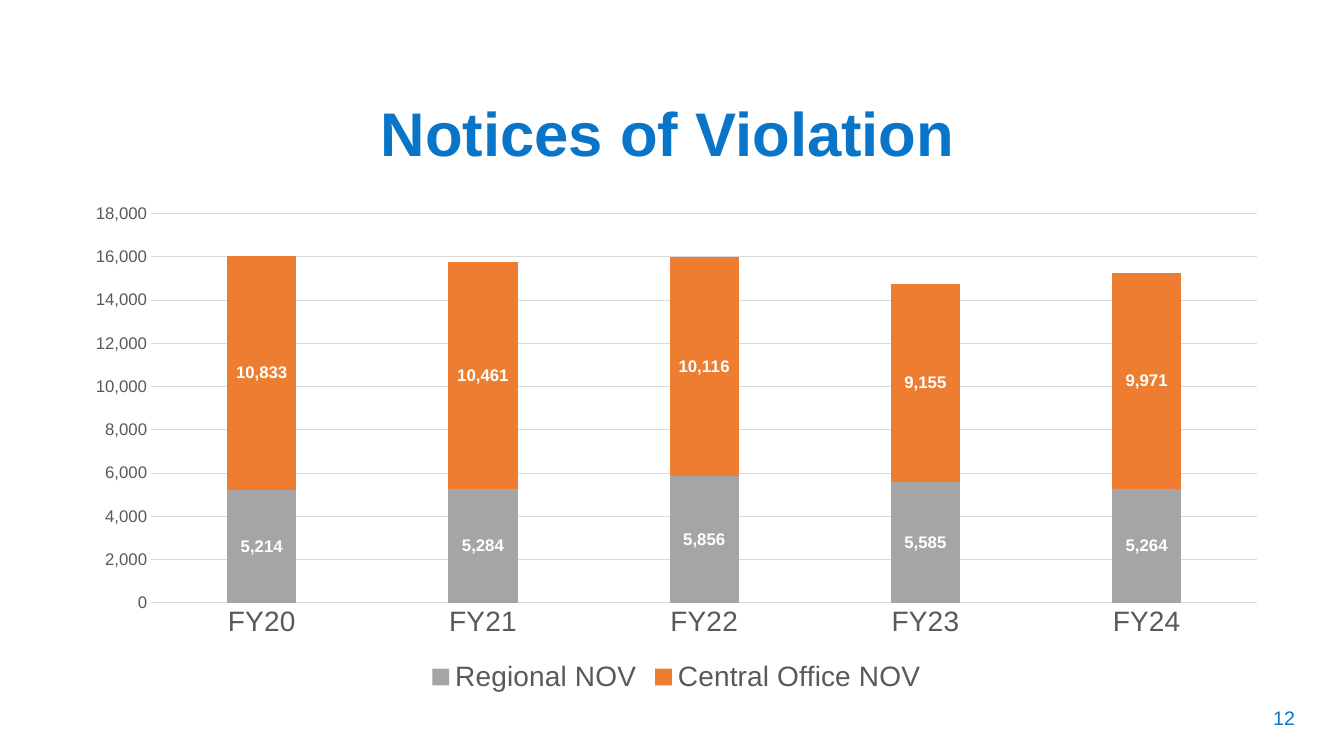
"""Builds the Notices of Violation slide with a stacked column chart by fiscal year."""
import pptx
import pptx.chart.data
import pptx.dml.color
import pptx.enum.chart
import pptx.enum.text
import pptx.util

Inches = pptx.util.Inches
Pt = pptx.util.Pt
RGBColor = pptx.dml.color.RGBColor

BLUE = RGBColor(0x08, 0x75, 0xC8)
GRAY = RGBColor(0xA5, 0xA5, 0xA5)
ORANGE = RGBColor(0xED, 0x7D, 0x31)
AXIS_TEXT = RGBColor(0x59, 0x59, 0x59)
GRID = RGBColor(0xD9, 0xD9, 0xD9)
WHITE = RGBColor(0xFF, 0xFF, 0xFF)
BLACK = RGBColor(0, 0, 0)
FONT = "Arial"
NUMBER_FORMAT = "#,##0"


def style_font(font, size, color, bold=False):
    font.name = FONT
    font.size = Pt(size)
    font.bold = bold
    font.color.rgb = color


def fill_text(frame, text, size, bold=False):
    frame.text = text
    frame.word_wrap = True
    frame.vertical_anchor = pptx.enum.text.MSO_ANCHOR.TOP
    paragraph = frame.paragraphs[0]
    paragraph.alignment = pptx.enum.text.PP_ALIGN.CENTER
    style_font(paragraph.font, size, BLUE, bold)
    return paragraph


presentation = pptx.Presentation()
presentation.slide_width = Inches(13.33)
presentation.slide_height = Inches(7.5)
slide = presentation.slides.add_slide(presentation.slide_layouts[5])

title = slide.shapes.title
title.left, title.top = Inches(1.47), Inches(0.97)
title.width, title.height = Inches(10.31), Inches(1.45)
fill_text(title.text_frame, "Notices of Violation", 44, True).line_spacing = 0.9

page_number = slide.shapes.add_textbox(Inches(12.29), Inches(6.95), Inches(0.89), Inches(0.4))
fill_text(page_number.text_frame, "12", 14)

notices = pptx.chart.data.CategoryChartData(number_format=NUMBER_FORMAT)
notices.categories = ["FY20", "FY21", "FY22", "FY23", "FY24"]
notices.add_series("Regional NOV", [5214, 5284, 5856, 5585, 5264])
notices.add_series("Central Office NOV", [10833, 10461, 10116, 9155, 9971])
chart = slide.shapes.add_chart(
    pptx.enum.chart.XL_CHART_TYPE.COLUMN_STACKED,
    Inches(0.71), Inches(1.93), Inches(12), Inches(5), notices,
).chart
style_font(chart.font, 10, BLACK)
chart.has_title = False

chart.has_legend = True
chart.legend.position = pptx.enum.chart.XL_LEGEND_POSITION.BOTTOM
chart.legend.include_in_layout = False
style_font(chart.legend.font, 20, AXIS_TEXT)

years = chart.category_axis
counts = chart.value_axis
for axis, size in ((years, 20), (counts, 12)):
    axis.major_tick_mark = pptx.enum.chart.XL_TICK_MARK.NONE
    axis.minor_tick_mark = pptx.enum.chart.XL_TICK_MARK.NONE
    style_font(axis.tick_labels.font, size, AXIS_TEXT)

counts.minimum_scale = 0
counts.maximum_scale = 18000
counts.major_unit = 2000
counts.tick_labels.number_format = NUMBER_FORMAT
counts.tick_labels.number_format_is_linked = False
counts.format.line.fill.background()
counts.has_major_gridlines = True
for line in (years.format.line, counts.major_gridlines.format.line):
    line.color.rgb = GRID
    line.width = Pt(0.75)

plot = chart.plots[0]
plot.gap_width = 219
plot.overlap = 100
plot.vary_by_categories = False
for office, color in zip(plot.series, (GRAY, ORANGE)):
    office.format.fill.solid()
    office.format.fill.fore_color.rgb = color
    office.invert_if_negative = False
    labels = office.data_labels
    labels.show_value = True
    labels.position = pptx.enum.chart.XL_LABEL_POSITION.CENTER
    labels.number_format = NUMBER_FORMAT
    labels.number_format_is_linked = False
    style_font(labels.font, 12, WHITE, True)

presentation.save("out.pptx")
